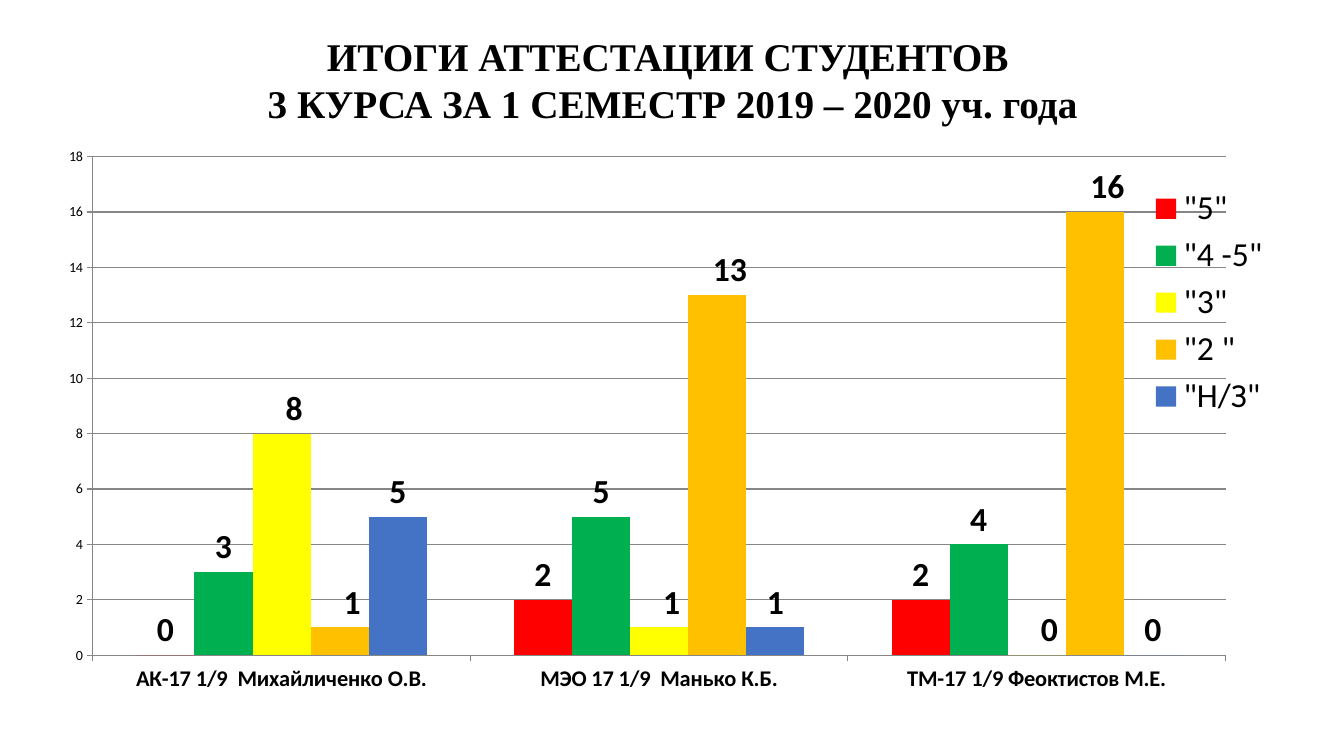
"""Build a slide charting the third-year students' semester grades."""
from lxml import etree
from pptx import Presentation
from pptx.chart.data import CategoryChartData
from pptx.dml.color import RGBColor
from pptx.enum.chart import XL_CHART_TYPE, XL_LABEL_POSITION, XL_LEGEND_POSITION, XL_TICK_MARK
from pptx.enum.text import MSO_ANCHOR, PP_ALIGN
from pptx.oxml.ns import qn
from pptx.util import Inches, Pt

COLUMNS = XL_CHART_TYPE.COLUMN_CLUSTERED
OUTSIDE_END = XL_LABEL_POSITION.OUTSIDE_END
LEGEND_RIGHT = XL_LEGEND_POSITION.RIGHT
TICK_OUTSIDE = XL_TICK_MARK.OUTSIDE
MIDDLE = MSO_ANCHOR.MIDDLE
CENTER = PP_ALIGN.CENTER

TITLE = ["ИТОГИ АТТЕСТАЦИИ СТУДЕНТОВ ", "3 КУРСА ЗА 1 СЕМЕСТР 2019 – 2020 уч. года"]
GROUPS = ["АК-17 1/9  Михайличенко О.В.", "МЭО 17 1/9  Манько К.Б.", "ТМ-17 1/9 Феоктистов М.Е."]
GRADES = [
    ('"5"', (0, 2, 2), "FF0000"),
    ('"4 -5"', (3, 5, 4), "00B050"),
    ('"3"', (8, 1, 0), "FFFF00"),
    ('"2 "', (1, 13, 16), "FFC000"),
    ('"Н/З"', (5, 1, 0), "4472C4"),
]
SHIFTED_GRADES = ('"3"', '"2 "')


def color(value):
    return RGBColor.from_string(value)


def set_layout(parent, index, **settings):
    for old_layout in parent.findall(qn("c:layout")):
        parent.remove(old_layout)
    layout = etree.Element(qn("c:layout"))
    manual = etree.SubElement(layout, qn("c:manualLayout"))
    for name, value in settings.items():
        etree.SubElement(manual, qn(f"c:{name}")).set("val", str(value))
    parent.insert(index, layout)


presentation = Presentation()
presentation.slide_width = Inches(13.33)
presentation.slide_height = Inches(7.5)
slide = presentation.slides.add_slide(presentation.slide_layouts[6])

title = slide.shapes.add_textbox(Inches(2.51), Inches(0.27), Inches(8.32), Inches(1.04))
title.text_frame.word_wrap = False
title.text_frame.vertical_anchor = MIDDLE
title.text_frame.text = "\n".join(TITLE)
for paragraph in title.text_frame.paragraphs:
    paragraph.alignment = CENTER
    paragraph.font.name = "Times New Roman"
    paragraph.font.size = Pt(28)
    paragraph.font.bold = True
    paragraph.font.color.rgb = color("000000")

chart_data = CategoryChartData()
chart_data.categories = GROUPS
for name, counts, fill in GRADES:
    chart_data.add_series(name, counts)
chart = slide.shapes.add_chart(
    COLUMNS, Inches(0.21), Inches(1.31), Inches(12.47), Inches(5.56), chart_data
).chart
chart.has_title = False
chart.font.name = "Calibri"
chart.font.size = Pt(10)
chart.font.color.rgb = color("000000")

plot = chart.plots[0]
plot.gap_width = 150
plot.overlap = 0
plot.vary_by_categories = False
for series, (name, counts, fill) in zip(plot.series, GRADES):
    series.format.fill.solid()
    series.format.fill.fore_color.rgb = color(fill)
    series.invert_if_negative = False
    labels = [series.data_labels]
    series.data_labels.show_value = True
    if name in SHIFTED_GRADES:
        labels += [series.points[index].data_label for index in range(len(counts))]
    for label in labels:
        label.position = OUTSIDE_END
        label.font.size = Pt(24)
        label.font.bold = True
    for point_label in series.data_labels._element.findall(qn("c:dLbl")):
        set_layout(point_label, 1, x=0.01, y=0)

category_axis, value_axis = chart.category_axis, chart.value_axis
category_axis.tick_labels.font.size = Pt(16)
category_axis.tick_labels.font.bold = True
value_axis.minimum_scale = 0
value_axis.maximum_scale = 18
value_axis.major_unit = 2
value_axis.has_major_gridlines = True
for axis in (category_axis, value_axis):
    axis.major_tick_mark = TICK_OUTSIDE
for lines in (category_axis, value_axis, value_axis.major_gridlines):
    lines.format.line.color.rgb = color("868686")
    lines.format.line.width = Pt(0.75)

chart.has_legend = True
legend = chart.legend
legend.position = LEGEND_RIGHT
legend.include_in_layout = True
legend.font.size = Pt(24)
set_layout(legend._element, 1, xMode="edge", yMode="edge", x=0.89, y=0.09, w=0.11, h=0.43)
set_layout(
    chart._chartSpace.chart.plotArea, 0, layoutTarget="inner",
    xMode="edge", yMode="edge", x=0.057, y=0.044, w=0.901, h=0.891,
)

presentation.save("out.pptx")
